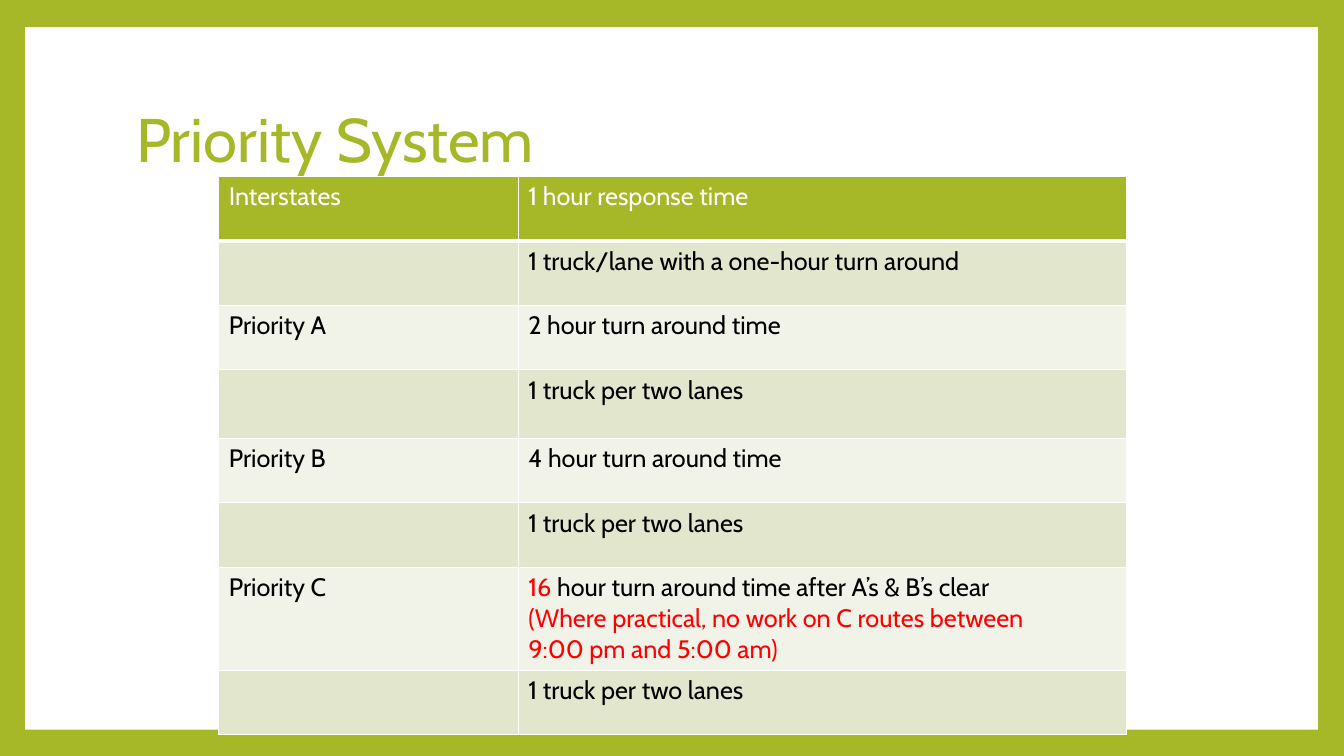
from dataclasses import dataclass

from lxml.etree import SubElement
from pptx import Presentation
from pptx.dml.color import RGBColor
from pptx.enum.shapes import MSO_SHAPE
from pptx.enum.text import MSO_ANCHOR, PP_ALIGN
from pptx.oxml.ns import qn
from pptx.util import Pt

EMU_PER_PX = 9144  # 100 px to the inch


@dataclass(frozen=True)
class Theme:
    font: str = "Cabin"
    title_size: int = 44
    table_size: int = 18
    green: str = "A6B727"
    white: str = "FFFFFF"
    black: str = "000000"
    red: str = "FF0000"
    dark_band: str = "E1E6CD"
    light_band: str = "F1F3E8"


THEME = Theme()

# Each cell is a list of paragraphs, each paragraph a list of (text, color) runs;
# a plain string is one paragraph in the row's own color.
PRIORITY_C_RESPONSE = [
    [("16", THEME.red), (" hour turn around time after A’s & B’s clear", THEME.black)],
    [("(Where practical, no work on C routes between", THEME.red)],
    [("9:00 pm and 5:00 am)", THEME.red)],
]
# Row height in px, road class, response
PRIORITY_ROWS = [
    (64, "Interstates", "1 hour response time"),
    (64, "", "1 truck/lane with a one-hour turn around"),
    (64, "Priority A", "2 hour turn around time"),
    (68, "", "1 truck per two lanes"),
    (64, "Priority B", "4 hour turn around time"),
    (64, "", "1 truck per two lanes"),
    (102, "Priority C", PRIORITY_C_RESPONSE),
    (64, "", "1 truck per two lanes"),
]
COLUMN_WIDTHS = (297, 603)


def px(length):
    return length * EMU_PER_PX


def rgb(color):
    return RGBColor.from_string(color)


def format_run(run, size, color):
    run.font.name = THEME.font
    run.font.size = Pt(size)
    run.font.color.rgb = rgb(color)


def add_panel(slide, left, top, width, height):
    """White panel that leaves the green background as a frame."""
    panel = slide.shapes.add_shape(
        MSO_SHAPE.RECTANGLE, px(left), px(top), px(width), px(height))
    panel.shadow.inherit = False
    panel.fill.solid()
    panel.fill.fore_color.rgb = rgb(THEME.white)
    panel.line.fill.background()
    # Send behind the title
    slide.shapes.title._element.addprevious(panel._element)


def set_title(slide, text, left, top, width, height):
    title = slide.shapes.title
    title.left, title.top = px(left), px(top)
    title.width, title.height = px(width), px(height)
    frame = title.text_frame
    frame.text = text
    frame.word_wrap = True
    frame.vertical_anchor = MSO_ANCHOR.MIDDLE
    paragraph = frame.paragraphs[0]
    paragraph.alignment = PP_ALIGN.LEFT
    paragraph.line_spacing = 0.9
    format_run(paragraph.runs[0], THEME.title_size, THEME.green)


def set_borders(cell, bottom_width):
    """White lines on all four sides, placed before the cell's fill."""
    properties = cell._tc.get_or_add_tcPr()
    widths = {"a:lnL": 1, "a:lnR": 1, "a:lnT": 1, "a:lnB": bottom_width}
    for position, (side, width) in enumerate(widths.items()):
        line = SubElement(properties, qn(side), w=str(Pt(width)))
        fill = SubElement(line, qn("a:solidFill"))
        SubElement(fill, qn("a:srgbClr"), val=THEME.white)
        properties.insert(position, line)


def fill_cell(cell, content, text_color, fill_color, bottom_width):
    cell.fill.solid()
    cell.fill.fore_color.rgb = rgb(fill_color)
    set_borders(cell, bottom_width)
    if not content:
        return
    paragraphs = [[(content, text_color)]] if isinstance(content, str) else content
    frame = cell.text_frame
    for index, runs in enumerate(paragraphs):
        paragraph = frame.add_paragraph() if index else frame.paragraphs[0]
        for text, color in runs:
            run = paragraph.add_run()
            run.text = text
            format_run(run, THEME.table_size, color)


def add_priority_table(slide, left, top):
    heights = [row[0] for row in PRIORITY_ROWS]
    table = slide.shapes.add_table(
        len(PRIORITY_ROWS), len(COLUMN_WIDTHS), px(left), px(top),
        px(sum(COLUMN_WIDTHS)), px(sum(heights))).table
    for column, width in zip(table.columns, COLUMN_WIDTHS):
        column.width = px(width)
    for index, (height, *contents) in enumerate(PRIORITY_ROWS):
        table.rows[index].height = px(height)
        if index == 0:
            style = (THEME.white, THEME.green, 3)
        else:
            band = THEME.dark_band if index % 2 else THEME.light_band
            style = (THEME.black, band, 1)
        for cell, content in zip(table.rows[index].cells, contents):
            fill_cell(cell, content, *style)


def main():
    presentation = Presentation()
    presentation.slide_width, presentation.slide_height = px(1333), px(750)
    slide = presentation.slides.add_slide(presentation.slide_layouts[5])

    # Green frame
    slide.background.fill.solid()
    slide.background.fill.fore_color.rgb = rgb(THEME.green)
    add_panel(slide, 25, 27, 1282, 697)

    # Title and table
    set_title(slide, "Priority System", 125, 67, 1080, 148)
    add_priority_table(slide, 217, 175)

    presentation.save("out.pptx")


if __name__ == "__main__":
    main()
